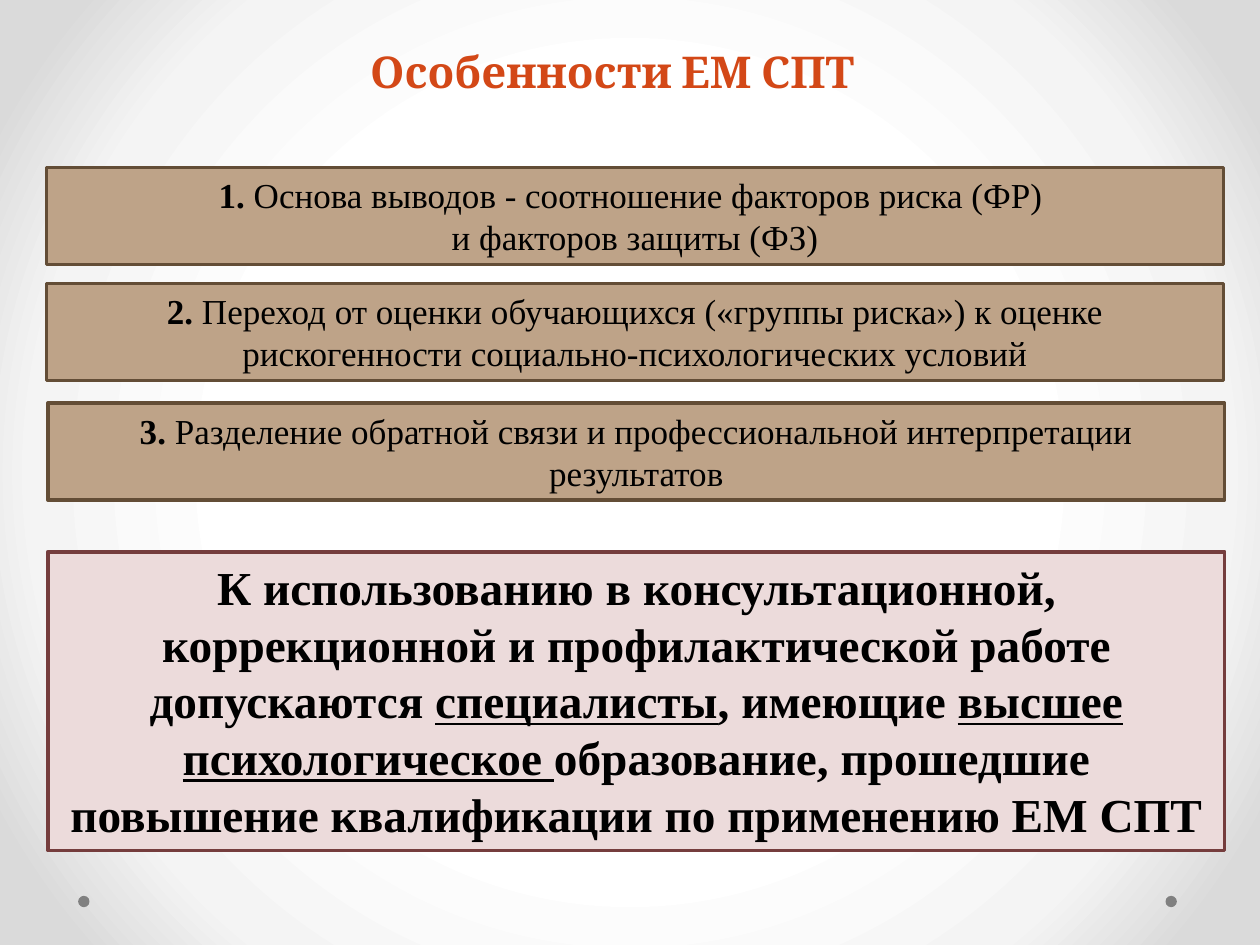
from pptx import Presentation
from pptx.dml.color import RGBColor
from pptx.enum.shapes import MSO_SHAPE as SHAPE
from pptx.enum.text import MSO_ANCHOR as ANCHOR, MSO_AUTO_SIZE as AUTO, PP_ALIGN as ALIGN
from pptx.oxml import parse_xml
from pptx.util import Inches, Pt

NS = "http://schemas.openxmlformats.org/drawingml/2006/main"
SERIF = "Times New Roman"
FEATURES = [
    (0.37, 1.33, "1. ", "Основа выводов - соотношение факторов риска (ФР) \nи факторов защиты (ФЗ)"),
    (0.37, 2.25, "2. ", "Переход от оценки обучающихся («группы риска») к оценке "
                        "рискогенности социально-психологических условий"),
    (0.38, 3.2, "3. ", "Разделение обратной связи и профессиональной интерпретации результатов"),
]
REQUIREMENT = [
    ("К использованию в консультационной, коррекционной и профилактической работе допускаются ", {}),
    ("специалисты", {"underline": True}),
    (", имеющие ", {}),
    ("высшее психологическое ", {"underline": True}),
    ("образование, прошедшие повышение квалификации по применению ЕМ СПТ", {}),
]


def rgb(value):
    return RGBColor.from_string(value)


def set_background(slide, stops):
    fill = slide.background.fill
    fill.gradient()
    grad = slide.background._cSld.bg.bgPr.find(f"{{{NS}}}gradFill")
    marks = "".join(f'<a:gs pos="{pos * 1000}"><a:srgbClr val="{color}"/></a:gs>'
                    for pos, color in stops)
    new = parse_xml(
        f'<a:gradFill xmlns:a="{NS}" rotWithShape="1"><a:gsLst>{marks}</a:gsLst>'
        '<a:path path="circle"><a:fillToRect l="50000" t="50000" r="50000" b="50000"/>'
        '</a:path></a:gradFill>')
    grad.getparent().replace(grad, new)


def write(sp, runs, size, font=SERIF, color="000000"):
    tf = sp.text_frame
    for name, value in {"word_wrap": True, "auto_size": AUTO.SHAPE_TO_FIT_TEXT}.items():
        setattr(tf, name, value)
    p = tf.paragraphs[0]
    p.alignment = ALIGN.CENTER
    for text, extra in runs:
        for i, line in enumerate(text.split("\n")):
            if i:
                p.add_line_break()
            r = p.add_run()
            r.text = line
            style = {"size": Pt(size), "name": font, "bold": True, **extra}
            for name, value in style.items():
                setattr(r.font, name, value)
            r.font.color.rgb = rgb(color)


def add_shape(slide, kind, box, fill, line=None):
    sp = slide.shapes.add_shape(kind, *map(Inches, box))
    sp.shadow.inherit = False
    sp.fill.solid()
    sp.fill.fore_color.rgb = rgb(fill)
    if line:
        sp.line.color.rgb = rgb(line)
        sp.line.width = Pt(2)
    else:
        sp.line.fill.background()
    return sp


def add_panel(slide, box, fill, line, runs, size):
    sp = add_shape(slide, SHAPE.RECTANGLE, box, fill, line)
    sp.text_frame.vertical_anchor = ANCHOR.TOP
    write(sp, runs, size)


def add_title(slide, box, text):
    sp = slide.shapes.add_textbox(*map(Inches, box))
    write(sp, [(text, {})], 25, "Cambria", "D34817")


def main():
    prs = Presentation()
    prs.slide_width, prs.slide_height = Inches(10), Inches(7.5)
    slide = prs.slides.add_slide(prs.slide_layouts[6])
    set_background(slide, [(50, "FFFFFF"), (76, "F4F4F4"), (92, "DADADA")])
    for left in (9.25, 0.62):
        add_shape(slide, SHAPE.OVAL, (left, 7.11, 0.09, 0.09), "808080")
    add_panel(slide, (0.38, 4.38, 9.34, 2.37), "ECDBDB", "753D3D", REQUIREMENT, 27)
    for left, top, number, text in FEATURES:
        add_panel(slide, (left, top, 9.34, 0.77), "BEA388", "634D36",
                  [(number, {}), (text, {"bold": False})], 20)
    add_title(slide, (0.53, 0.31, 8.66, 0.52), "Особенности ЕМ СПТ")
    prs.save("out.pptx")


if __name__ == "__main__":
    main()
